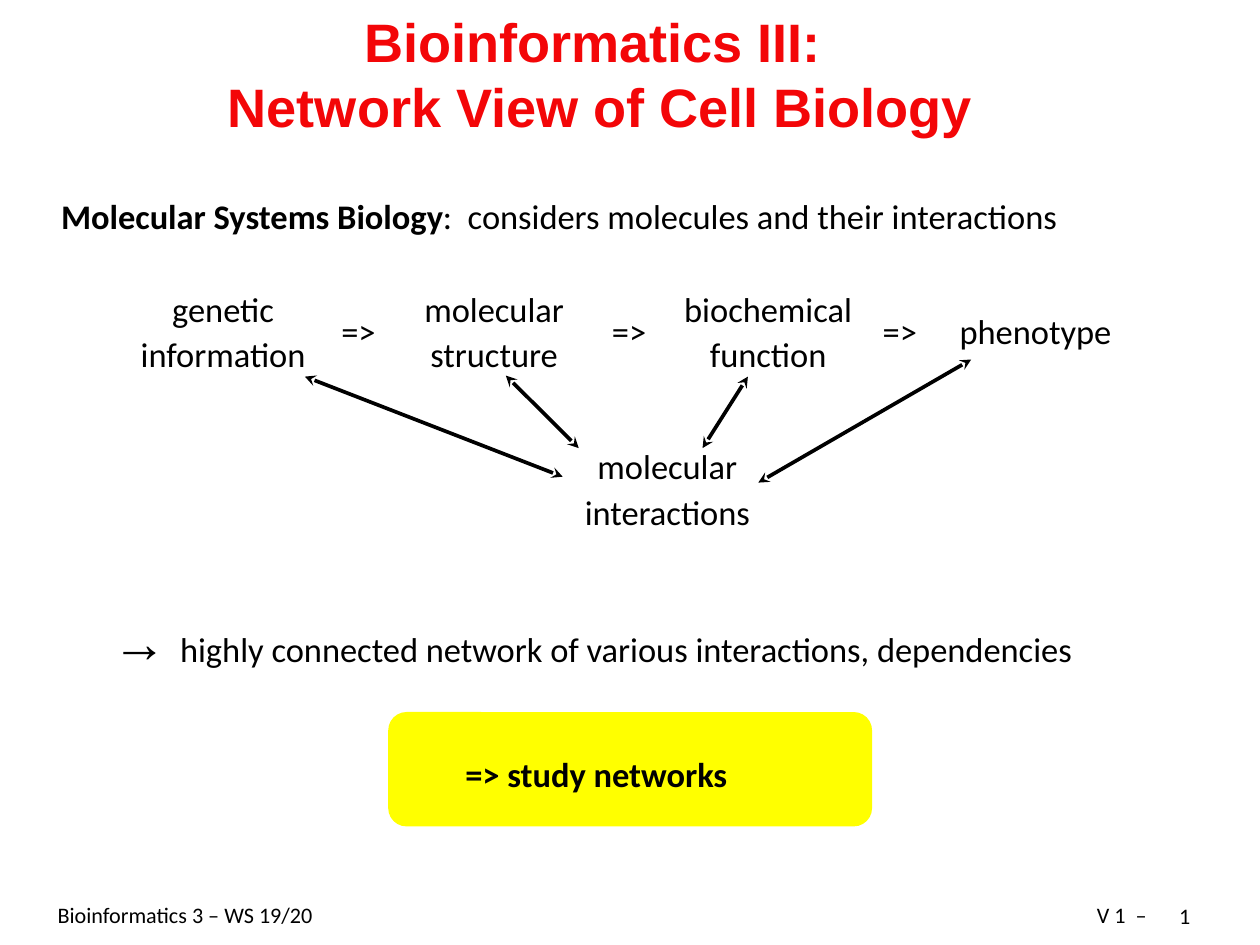
from dataclasses import dataclass

from lxml.etree import SubElement
from pptx import Presentation
from pptx.dml.color import RGBColor
from pptx.enum.shapes import MSO_CONNECTOR, MSO_SHAPE
from pptx.enum.text import MSO_ANCHOR, MSO_AUTO_SIZE, PP_ALIGN
from pptx.oxml.ns import qn
from pptx.slide import Slide
from pptx.text.text import TextFrame, _Paragraph
from pptx.util import Cm, Pt

BLACK = RGBColor(0x00, 0x00, 0x00)
RED = RGBColor(0xF3, 0x06, 0x08)
YELLOW = RGBColor(0xFF, 0xFF, 0x00)

FRAME_FORMAT = {
    "margin_left": 0,
    "margin_right": 0,
    "margin_top": 0,
    "margin_bottom": 0,
    "word_wrap": True,
    "auto_size": MSO_AUTO_SIZE.NONE,
}


@dataclass(frozen=True)
class Span:
    text: str
    size: int = 28
    bold: bool = False
    font: str = "Calibri"
    color: RGBColor = BLACK


@dataclass(frozen=True)
class TextBlock:
    """Text with its place in centimetres."""
    left: float
    top: float
    width: float
    height: float
    spans: tuple[Span, ...]
    align: PP_ALIGN = PP_ALIGN.LEFT
    line_spacing: float = 1.1


@dataclass(frozen=True)
class Link:
    """Double-headed arrow between two points in centimetres."""
    start: tuple[float, float]
    end: tuple[float, float]


def centred(left: float, top: float, width: float, height: float, text: str) -> TextBlock:
    return TextBlock(left, top, width, height, (Span(text),), PP_ALIGN.CENTER)


TITLE = Span("Bioinformatics III: \vNetwork View of Cell Biology", 44, True, "Arial", RED)

FOOTER = (
    TextBlock(1.65, 25.76, 13.82, 0.74, (Span("Bioinformatics 3 – WS 19/20", 18),)),
    TextBlock(29.57, 25.76, 3.45, 0.74, (Span("V 1  – ", 18),), PP_ALIGN.RIGHT),
    TextBlock(33.63, 25.89, 0.66, 0.74, (Span("1", 18),), PP_ALIGN.CENTER, 1.0),
)

STATEMENTS = (
    TextBlock(1.75, 5.49, 32.79, 1.32, (
        Span("Molecular Systems Biology", bold=True),
        Span(":  considers molecules and their interactions"),
    )),
    TextBlock(3.22, 17.27, 30.1, 2.06, (
        Span("→ ", 44, font="Times New Roman"),
        Span("highly connected network of various interactions, dependencies"),
    )),
    TextBlock(13.34, 21.49, 9.42, 1.17, (Span("=> study networks", bold=True),)),
)

STAGES = (
    centred(3.84, 8.13, 5.11, 2.39, "genetic information"),
    centred(11.61, 8.13, 5.11, 2.39, "molecular structure"),
    centred(18.97, 8.13, 6.1, 2.39, "biochemical function"),
    centred(27.13, 8.76, 5.11, 1.12, "phenotype"),
    centred(16.31, 12.65, 5.64, 2.39, "molecular interactions"),
)

IMPLICATIONS = tuple(
    centred(9.45 + 7.76 * step, 8.76, 1.65, 1.12, "=>") for step in range(3)
)

LINKS = (
    Link((14.5, 10.77), (16.59, 12.85)),
    Link((8.74, 10.8), (16.13, 13.67)),
    Link((21.44, 10.8), (20.14, 12.85)),
    Link((27.84, 10.31), (21.74, 13.84)),
)


def apply_format(target: object, values: dict[str, object]) -> None:
    for name, value in values.items():
        setattr(target, name, value)


def add_span(para: _Paragraph, span: Span) -> None:
    for index, line in enumerate(span.text.split("\v")):
        if index:
            para.add_line_break()
        run = para.add_run()
        run.text = line
        apply_format(run.font, {"size": Pt(span.size), "bold": span.bold, "name": span.font})
        run.font.color.rgb = span.color


def fill_frame(frame: TextFrame, spans: tuple[Span, ...], align: PP_ALIGN,
               line_spacing: float) -> None:
    apply_format(frame, FRAME_FORMAT)
    para = frame.paragraphs[0]
    apply_format(para, {"alignment": align, "line_spacing": line_spacing})
    for span in spans:
        add_span(para, span)


def add_title(page: Slide) -> None:
    title = page.shapes.title
    apply_format(title, {"left": Cm(1.75), "top": Cm(0.84),
                         "width": Cm(30.94), "height": Cm(2.51)})
    fill_frame(title.text_frame, (TITLE,), PP_ALIGN.CENTER, 1.0)
    title.text_frame.vertical_anchor = MSO_ANCHOR.MIDDLE


def add_text(page: Slide, block: TextBlock) -> None:
    box = page.shapes.add_textbox(
        Cm(block.left), Cm(block.top), Cm(block.width), Cm(block.height))
    fill_frame(box.text_frame, block.spans, block.align, block.line_spacing)


def add_highlight(page: Slide) -> None:
    panel = page.shapes.add_shape(
        MSO_SHAPE.ROUNDED_RECTANGLE, Cm(11.13), Cm(20.42), Cm(13.87), Cm(3.28))
    panel.adjustments[0] = 0.16
    panel.shadow.inherit = False
    panel.fill.solid()
    panel.fill.fore_color.rgb = YELLOW
    panel.line.fill.background()


def add_link(page: Slide, link: Link) -> None:
    arrow = page.shapes.add_connector(
        MSO_CONNECTOR.STRAIGHT, *map(Cm, link.start), *map(Cm, link.end))
    arrow.line.width = Pt(3)
    arrow.line.color.rgb = BLACK
    outline = arrow.line._get_or_add_ln()
    for end in ("a:headEnd", "a:tailEnd"):
        SubElement(outline, qn(end), type="stealth")
    SubElement(arrow._element.spPr, qn("a:effectLst"))


def main() -> None:
    deck = Presentation()
    apply_format(deck, {"slide_width": Cm(36.12), "slide_height": Cm(27.1)})
    page = deck.slides.add_slide(deck.slide_layouts.get_by_name("Title Only"))
    add_title(page)
    add_highlight(page)
    for block in FOOTER + STATEMENTS + STAGES + IMPLICATIONS:
        add_text(page, block)
    for link in LINKS:
        add_link(page, link)
    deck.save("out.pptx")


if __name__ == "__main__":
    main()
